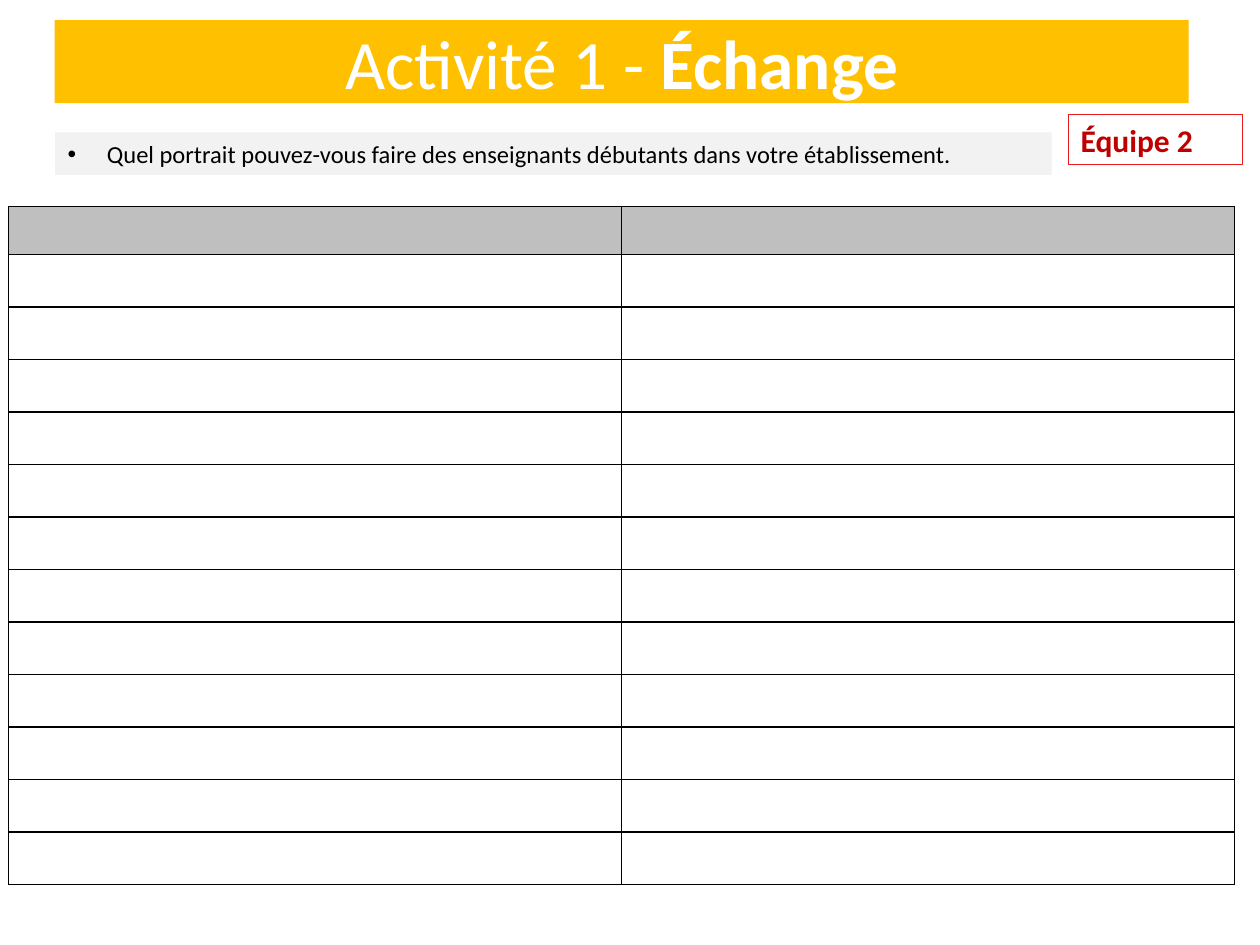
import pptx
import pptx.dml.color
import pptx.enum.shapes
import pptx.enum.text
import pptx.util
import lxml.etree

Pt = pptx.util.Pt
FONT = "Calibri"
COLORS = {
    "gold": "FFC000",
    "white": "FFFFFF",
    "black": "000000",
    "pale": "F2F2F2",
    "gray": "BFBFBF",
    "edge": "E71B1B",
    "red": "C00000",
}


def color(name):
    return pptx.dml.color.RGBColor.from_string(COLORS[name])


def paint(fill, name):
    if name:
        fill.solid()
        fill.fore_color.rgb = color(name)
    else:
        fill.background()


def add_box(slide, area, fill=None, edge=None):
    kind = pptx.enum.shapes.MSO_SHAPE.RECTANGLE
    box = slide.shapes.add_shape(kind, *map(Pt, area))
    box.shadow.inherit = False
    paint(box.fill, fill)
    paint(box.line.fill, edge)
    if edge:
        box.line.width = Pt(0.75)
    frame = box.text_frame
    frame.word_wrap = True
    frame.vertical_anchor = pptx.enum.text.MSO_ANCHOR.MIDDLE
    para = frame.paragraphs[0]
    para.alignment = pptx.enum.text.PP_ALIGN.LEFT
    return para


def add_run(para, text, size, tint, bold=False):
    run = para.add_run()
    run.text = text
    run.font.name = FONT
    run.font.size = Pt(size)
    run.font.bold = bold
    run.font.color.rgb = color(tint)


def add_node(parent, tag, **attrs):
    node = lxml.etree.SubElement(parent, pptx.oxml.ns.qn(tag))
    for key, value in attrs.items():
        node.set(key, str(value))
    return node


def set_bullet(para, indent):
    props = para._p.get_or_add_pPr()
    props.set("marL", str(Pt(indent)))
    props.set("indent", str(-Pt(indent)))
    add_node(props, "a:buFont", typeface="Arial")
    add_node(props, "a:buChar", char="•")


def set_cell(cell, fill):
    cell.margin_top = cell.margin_bottom = 0
    props = cell._tc.get_or_add_tcPr()
    for side in "LRTB":
        line = add_node(props, f"a:ln{side}", w=Pt(1))
        solid = add_node(line, "a:solidFill")
        add_node(solid, "a:srgbClr", val=COLORS["black"])
    paint(cell.fill, fill)


def add_grid(slide, left, top, widths, heights):
    area = map(Pt, (left, top, sum(widths), sum(heights)))
    grid = slide.shapes.add_table(len(heights), len(widths), *area).table
    for col, width in zip(grid.columns, widths):
        col.width = Pt(width)
    for index, (row, height) in enumerate(zip(grid.rows, heights)):
        row.height = Pt(height)
        for cell in row.cells:
            set_cell(cell, None if index else "gray")


def main():
    deck = pptx.Presentation()
    deck.slide_width, deck.slide_height = Pt(720), Pt(540)
    slide = deck.slides.add_slide(deck.slide_layouts[6])

    title = add_box(slide, (31.3, 11.5, 648, 47.5), "gold")
    title.alignment = pptx.enum.text.PP_ALIGN.CENTER
    add_run(title, "Activité 1 - ", 39.6, "white")
    add_run(title, "Échange", 39.6, "white", True)

    add_grid(slide, 5, 118, [350.2, 350.2], [27.5] + [30] * 12)

    ask = add_box(slide, (31.5, 75.6, 569.5, 24.3), "pale")
    set_bullet(ask, 22.5)
    add_run(
        ask,
        "Quel portrait pouvez-vous faire des enseignants débutants "
        "dans votre établissement.",
        14,
        "black",
    )

    team = add_box(slide, (610.5, 65.3, 99.6, 28.8), edge="edge")
    add_run(team, "Équipe 2", 18, "red", True)

    deck.save("out.pptx")


if __name__ == "__main__":
    main()
